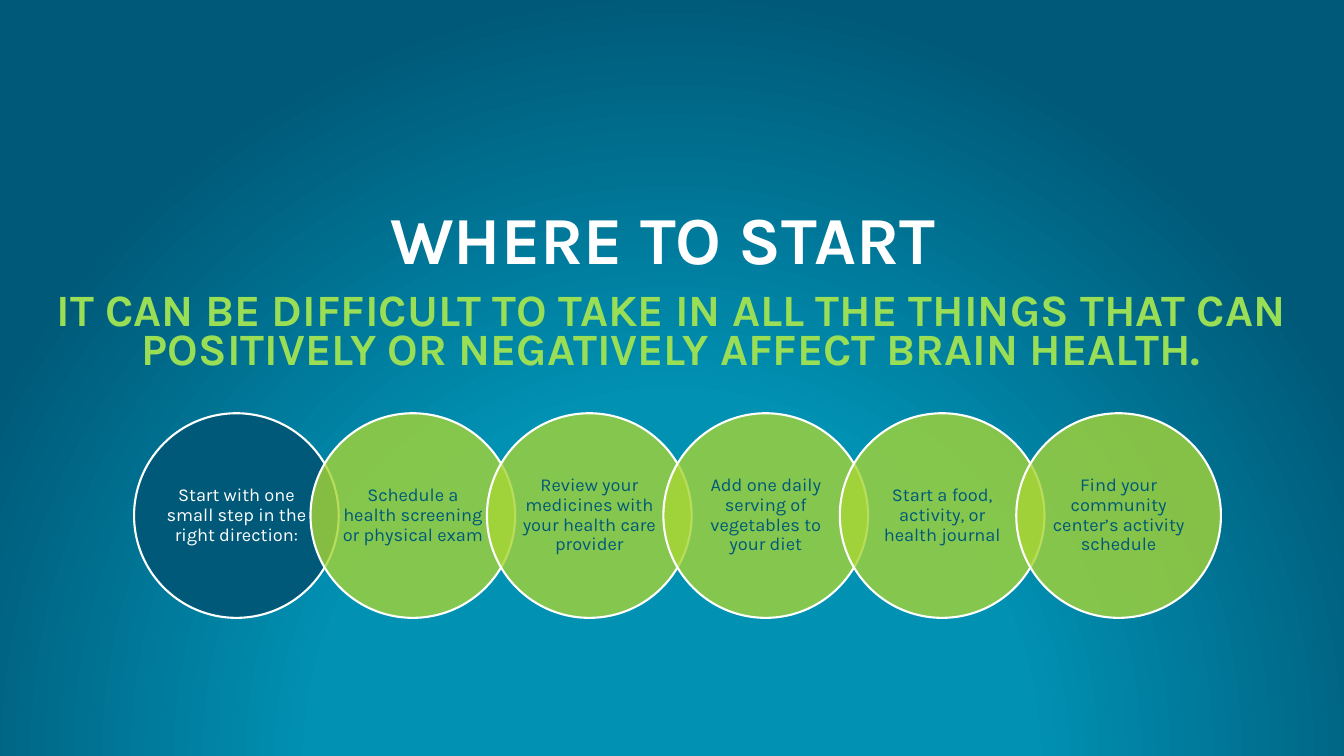
from lxml import etree
from pptx import Presentation, util as u
from pptx.dml.color import RGBColor
from pptx.enum import shapes, text
from pptx.oxml import parse_xml
from pptx.oxml.ns import qn, nsdecls

THEME = dict(font="Karla", white="FFFFFF", navy="005978", teal="0091B3",
             lime="A7D535", bright="9ADE56", title=48, subtitle=32, step=13)

deck = Presentation()
deck.slide_width, deck.slide_height = u.Inches(13.33), u.Inches(7.5)
page = deck.slides.add_slide(deck.slide_layouts[6])


def write(shape, words, size, color, spacing, anchor, bold=False):
    frame = shape.text_frame
    frame.word_wrap = True
    frame.vertical_anchor = anchor
    frame.text = words
    para = frame.paragraphs[0]
    para.alignment = text.PP_ALIGN.CENTER
    para.line_spacing = spacing
    para.font.name = THEME["font"]
    para.font.size = u.Pt(size)
    para.font.bold = bold
    para.font.color.rgb = RGBColor.from_string(color)


# Background: radial glow centred below the slide
page.background.fill.gradient()
gradient = page.element.find(".//" + qn("a:gradFill"))
stops = [(0, "teal"), (46, "teal"), (100, "navy")]
stop_xml = "".join(
    f'<a:gs pos="{share * 1000}"><a:srgbClr val="{THEME[name]}"/></a:gs>'
    for share, name in stops)
gradient.getparent().replace(gradient, parse_xml(
    f'<a:gradFill {nsdecls("a")} rotWithShape="1"><a:gsLst>{stop_xml}</a:gsLst>'
    '<a:path path="circle"><a:fillToRect l="50000" t="130000" r="50000" b="-30000"/>'
    '</a:path></a:gradFill>'))

# Headings
headings = [
    ("WHERE TO START", 2.04, 0.78, 13.15, "title", "white", 0.9,
     text.MSO_ANCHOR.BOTTOM),
    ("IT CAN BE DIFFICULT TO TAKE IN ALL THE THINGS THAT CAN POSITIVELY "
     "OR NEGATIVELY AFFECT BRAIN HEALTH.", 2.89, 0.85, 13.33, "subtitle", "bright",
     u.Pt(27.8), text.MSO_ANCHOR.TOP),
]
for words, top, height, width, size, color, spacing, anchor in headings:
    box = page.shapes.add_textbox(0, u.Inches(top), u.Inches(width), u.Inches(height))
    write(box, words, THEME[size], THEME[color], spacing, anchor, bold=True)

# Chain of overlapping circles
LEFT, TOP, DIAMETER, PITCH = 1.33, 4.1, 2.03, 1.75
steps = [
    "Start with one small step in the right direction:",
    "Schedule a health screening or physical exam",
    "Review your medicines with your health care provider",
    "Add one daily serving of vegetables to your diet",
    "Start a food, activity, or\vhealth journal",
    "Find your community center’s activity schedule",
]
for index, words in enumerate(steps):
    first = index == 0
    circle = page.shapes.add_shape(
        shapes.MSO_SHAPE.OVAL, u.Inches(LEFT + index * PITCH), u.Inches(TOP),
        u.Inches(DIAMETER), u.Inches(DIAMETER))
    circle.shadow.inherit = False
    circle.fill.solid()
    circle.fill.fore_color.rgb = RGBColor.from_string(THEME["navy" if first else "lime"])
    if not first:
        tint = circle.element.spPr.find(qn("a:solidFill"))[0]
        etree.SubElement(tint, qn("a:alpha"), val="80000")
    circle.line.color.rgb = RGBColor.from_string(THEME["white"])
    circle.line.width = u.Pt(1.5)
    frame = circle.text_frame
    frame.margin_left = frame.margin_right = frame.margin_top = frame.margin_bottom = 0
    write(circle, words, THEME["step"], THEME["white" if first else "navy"], 0.9,
          text.MSO_ANCHOR.MIDDLE)

deck.save("out.pptx")
